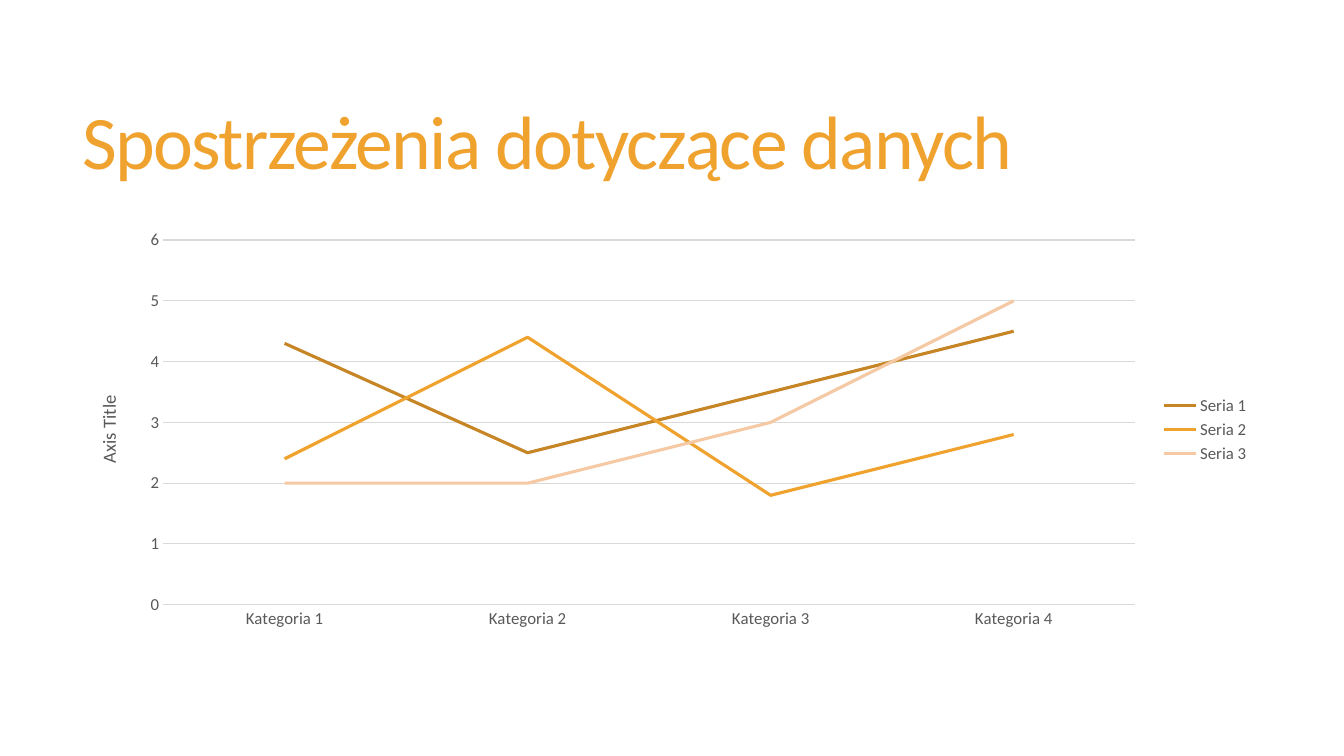
from dataclasses import dataclass

from pptx import Presentation
from pptx import util as u
from pptx.chart.data import CategoryChartData
from pptx.dml.color import RGBColor
from pptx.enum import chart as charts, text


@dataclass
class Theme:
    face: str = "Calibri"
    accent: str = "F0A22E"
    ink: str = "595959"
    grid: str = "D9D9D9"
    lines: tuple = ("C78626", "F0A22E", "F5C9A4")
    head: float = 54
    label: float = 12
    axis: float = 13.3
    thin: float = 0.75
    thick: float = 2.25


class Deck:
    def __init__(self, theme):
        self.theme = theme
        self.prs = Presentation()
        self.prs.slide_width = u.Inches(13.33)
        self.prs.slide_height = u.Inches(7.5)
        self.slide = self.prs.slides.add_slide(self.prs.slide_layouts[6])

    def font(self, font, size, color):
        font.name = self.theme.face
        font.size = u.Pt(size)
        font.bold = False
        font.color.rgb = RGBColor.from_string(color)

    def line(self, line, color, width):
        line.color.rgb = RGBColor.from_string(color)
        line.width = u.Pt(width)

    def title(self, words, box):
        frame = self.slide.shapes.add_textbox(*map(u.Inches, box)).text_frame
        frame.word_wrap = True
        frame.vertical_anchor = text.MSO_ANCHOR.MIDDLE
        para = frame.paragraphs[0]
        para.line_spacing = 0.85
        run = para.add_run()
        run.text = words
        self.font(run.font, self.theme.head, self.theme.accent)
        run.font._element.set("spc", "-120")

    def chart(self, cats, series, label, box):
        theme = self.theme
        data = CategoryChartData()
        data.categories = cats
        for name, vals in series.items():
            data.add_series(name, vals)
        chart = self.slide.shapes.add_chart(
            charts.XL_CHART_TYPE.LINE, *map(u.Inches, box), data).chart
        self.font(chart.font, theme.label, theme.ink)
        chart.has_title = False
        chart.has_legend = True
        chart.legend.position = charts.XL_LEGEND_POSITION.RIGHT
        chart.legend.include_in_layout = False
        self.font(chart.legend.font, theme.label, theme.ink)
        plot = chart.plots[0]
        plot.vary_by_categories = False
        for row, color in zip(plot.series, theme.lines):
            row.smooth = False
            row.marker.style = charts.XL_MARKER_STYLE.NONE
            self.line(row.format.line, color, theme.thick)
        for axis in (chart.category_axis, chart.value_axis):
            axis.major_tick_mark = charts.XL_TICK_MARK.NONE
            axis.minor_tick_mark = charts.XL_TICK_MARK.NONE
            self.font(axis.tick_labels.font, theme.label, theme.ink)
        self.line(chart.category_axis.format.line, theme.grid, theme.thin)
        scale = chart.value_axis
        scale.minimum_scale, scale.maximum_scale, scale.major_unit = 0, 6, 1
        scale.format.line.fill.background()
        scale.has_major_gridlines = True
        self.line(scale.major_gridlines.format.line, theme.grid, theme.thin)
        frame = scale.axis_title.text_frame
        frame._txBody.bodyPr.set("rot", "-5400000")
        frame._txBody.bodyPr.set("vert", "horz")
        run = frame.paragraphs[0].add_run()
        run.text = label
        self.font(run.font, theme.axis, theme.ink)


def main():
    deck = Deck(Theme())
    deck.title("Spostrzeżenia dotyczące danych", (0.72, 0.55, 11.78, 1.81))
    deck.chart(
        [f"Kategoria {n}" for n in range(1, 5)],
        {
            "Seria 1": (4.3, 2.5, 3.5, 4.5),
            "Seria 2": (2.4, 4.4, 1.8, 2.8),
            "Seria 3": (2, 2, 3, 5),
        },
        "Axis Title",
        (0.74, 2.2, 11.76, 4.12),
    )
    deck.prs.save("out.pptx")


if __name__ == "__main__":
    main()
